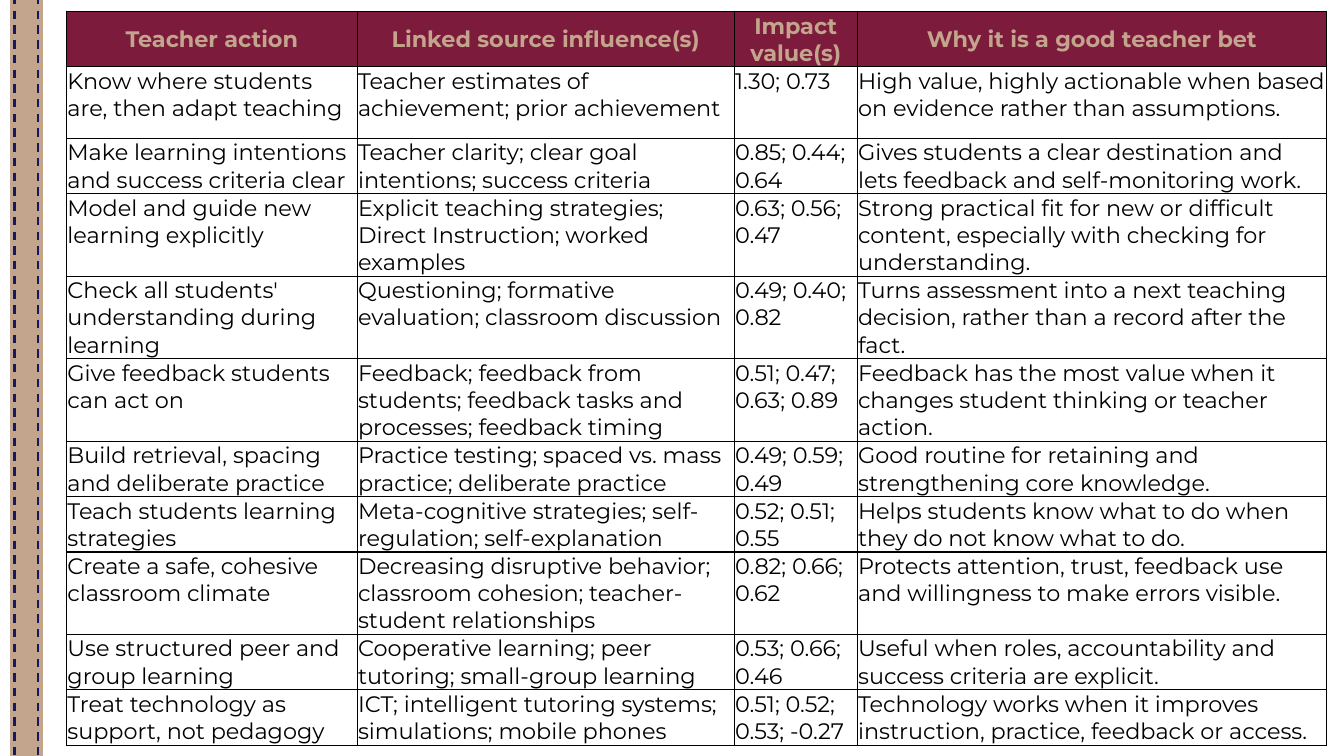
from lxml import etree
from pptx import Presentation
from pptx.dml.color import RGBColor
from pptx.enum.dml import MSO_LINE
from pptx.enum.shapes import MSO_CONNECTOR, MSO_SHAPE
from pptx.enum.text import MSO_ANCHOR, PP_ALIGN
from pptx.oxml.ns import qn
from pptx.util import Pt

RECTANGLE = MSO_SHAPE.RECTANGLE
STRAIGHT = MSO_CONNECTOR.STRAIGHT
DASH = MSO_LINE.DASH
TOP, MIDDLE = MSO_ANCHOR.TOP, MSO_ANCHOR.MIDDLE
LEFT, CENTER = PP_ALIGN.LEFT, PP_ALIGN.CENTER

TAN = RGBColor(0xC3, 0xA4, 0x8C)
NAVY = RGBColor(0x15, 0x19, 0x5D)
MAROON = RGBColor(0x7C, 0x1B, 0x3C)
BLACK = RGBColor(0, 0, 0)
WHITE = RGBColor(0xFF, 0xFF, 0xFF)

FONT = "Montserrat"
COLUMN_WIDTHS = (207.6, 269.3, 87.9, 335.2)
SHORT_ROW, TALL_ROW = 34.56, 51.12
TALL_ROWS = {1, 3, 4, 5, 8}
STITCH_POSITIONS = (10.4, 27.36)

TEACHER_BETS = (
    ("Teacher action", "Linked source influence(s)", "Impact value(s)",
     "Why it is a good teacher bet"),
    ("Know where students are, then adapt teaching",
     "Teacher estimates of achievement; prior achievement",
     "1.30; 0.73",
     "High value, highly actionable when based on evidence rather than assumptions."),
    ("Make learning intentions and success criteria clear",
     "Teacher clarity; clear goal intentions; success criteria",
     "0.85; 0.44; 0.64",
     "Gives students a clear destination and lets feedback and self-monitoring work."),
    ("Model and guide new learning explicitly",
     "Explicit teaching strategies; Direct Instruction; worked examples",
     "0.63; 0.56; 0.47",
     "Strong practical fit for new or difficult content, especially with checking "
     "for understanding."),
    ("Check all students' understanding during learning",
     "Questioning; formative evaluation; classroom discussion",
     "0.49; 0.40; 0.82",
     "Turns assessment into a next teaching decision, rather than a record after the fact."),
    ("Give feedback students can act on",
     "Feedback; feedback from students; feedback tasks and processes; feedback timing",
     "0.51; 0.47; 0.63; 0.89",
     "Feedback has the most value when it changes student thinking or teacher action."),
    ("Build retrieval, spacing and deliberate practice",
     "Practice testing; spaced vs. mass practice; deliberate practice",
     "0.49; 0.59; 0.49",
     "Good routine for retaining and strengthening core knowledge."),
    ("Teach students learning strategies",
     "Meta-cognitive strategies; self-regulation; self-explanation",
     "0.52; 0.51; 0.55",
     "Helps students know what to do when they do not know what to do."),
    ("Create a safe, cohesive classroom climate",
     "Decreasing disruptive behavior; classroom cohesion; teacher-student relationships",
     "0.82; 0.66; 0.62",
     "Protects attention, trust, feedback use and willingness to make errors visible."),
    ("Use structured peer and group learning",
     "Cooperative learning; peer tutoring; small-group learning",
     "0.53; 0.66; 0.46",
     "Useful when roles, accountability and success criteria are explicit."),
    ("Treat technology as support, not pedagogy",
     "ICT; intelligent tutoring systems; simulations; mobile phones",
     "0.51; 0.52; 0.53; -0.27",
     "Technology works when it improves instruction, practice, feedback or access."),
)


def write_text(frame, text, size=16, color=BLACK, bold=False, align=LEFT):
    paragraph = frame.paragraphs[0]
    paragraph.alignment = align
    run = paragraph.add_run()
    run.text = text
    run.font.name = FONT
    run.font.size = Pt(size)
    run.font.bold = bold
    run.font.color.rgb = color


def add_ribbon(slide):
    ribbon = slide.shapes.add_shape(RECTANGLE, Pt(7.2), Pt(-0.72), Pt(23.04), Pt(540.72))
    ribbon.shadow.inherit = False
    ribbon.fill.solid()
    ribbon.fill.fore_color.rgb = TAN
    ribbon.line.color.rgb = TAN
    ribbon.line.width = Pt(0.75)


def add_stitch(slide, x):
    stitch = slide.shapes.add_connector(STRAIGHT, Pt(x), Pt(-2.88), Pt(x), Pt(542.16))
    stitch.line.color.rgb = NAVY
    stitch.line.width = Pt(1.5)
    stitch.line.dash_style = DASH
    etree.SubElement(stitch._element.spPr, qn("a:effectLst"))


def add_borders(cell):
    properties = cell._tc.get_or_add_tcPr()
    for side in ("lnL", "lnR", "lnT", "lnB"):
        border = etree.SubElement(properties, qn(f"a:{side}"), w=str(Pt(1)))
        fill = etree.SubElement(border, qn("a:solidFill"))
        etree.SubElement(fill, qn("a:srgbClr"), val=str(BLACK))


def fill_cell(cell, text, header):
    add_borders(cell)
    cell.fill.solid()
    cell.fill.fore_color.rgb = MAROON if header else WHITE
    cell.margin_left = cell.margin_right = cell.margin_top = Pt(0.6)
    cell.margin_bottom = Pt(0)
    cell.vertical_anchor = MIDDLE if header else TOP
    if header:
        write_text(cell.text_frame, text, color=TAN, bold=True, align=CENTER)
    else:
        write_text(cell.text_frame, text)


def add_bets_table(slide):
    heights = [TALL_ROW if row in TALL_ROWS else SHORT_ROW
               for row in range(len(TEACHER_BETS))]
    table = slide.shapes.add_table(
        len(heights), len(COLUMN_WIDTHS), Pt(47.6), Pt(8.2),
        Pt(sum(COLUMN_WIDTHS)), Pt(sum(heights))).table
    table.horz_banding = False
    for column, width in zip(table.columns, COLUMN_WIDTHS):
        column.width = Pt(width)
    for row_index, (row, height) in enumerate(zip(table.rows, heights)):
        row.height = Pt(height)
        for cell, text in zip(row.cells, TEACHER_BETS[row_index]):
            fill_cell(cell, text, header=row_index == 0)


def main():
    presentation = Presentation()
    presentation.slide_width = Pt(960)
    presentation.slide_height = Pt(540)
    slide = presentation.slides.add_slide(presentation.slide_layouts[6])
    add_ribbon(slide)
    for x in STITCH_POSITIONS:
        add_stitch(slide, x)
    add_bets_table(slide)
    presentation.save("out.pptx")


if __name__ == "__main__":
    main()
